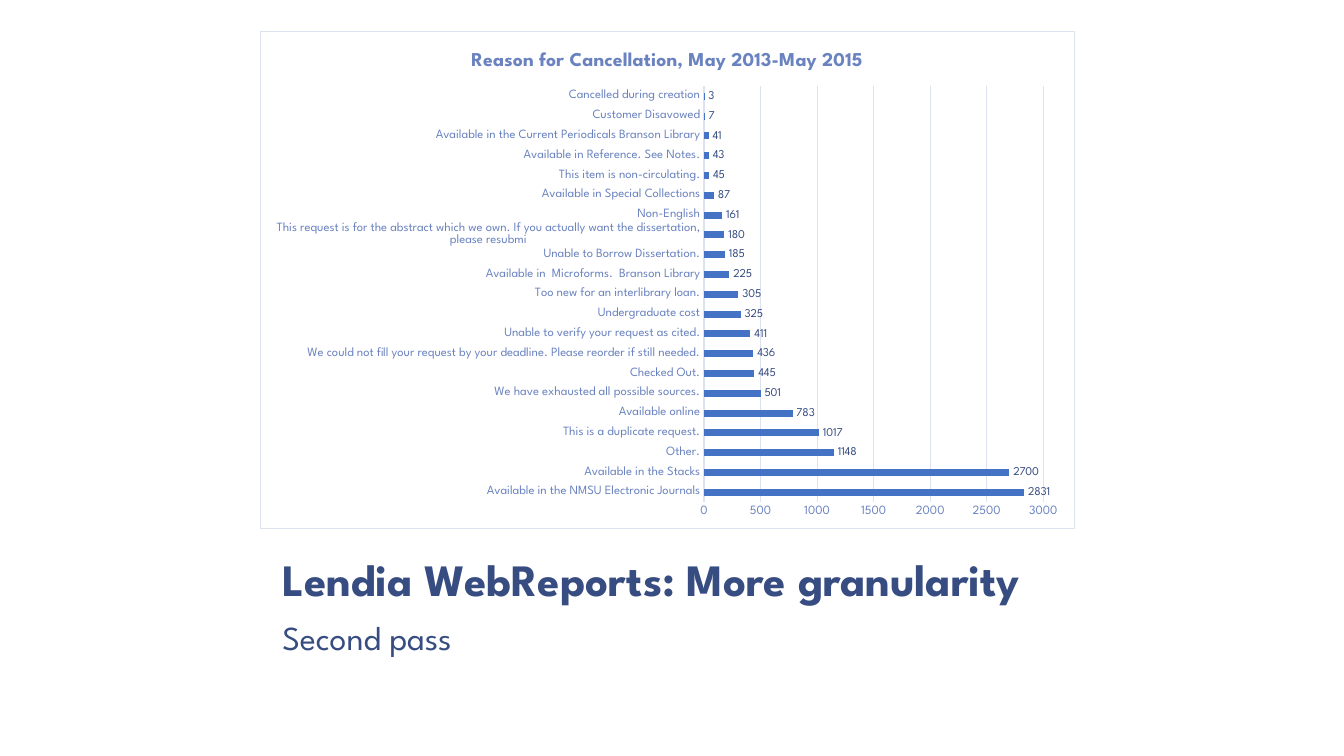
from dataclasses import dataclass

from lxml import etree
from pptx import Presentation
from pptx.chart.data import CategoryChartData
from pptx.dml.color import RGBColor
from pptx.enum.chart import XL_CHART_TYPE, XL_LABEL_POSITION, XL_TICK_MARK
from pptx.enum.text import MSO_ANCHOR
from pptx.oxml import parse_xml
from pptx.oxml.ns import nsdecls, qn
from pptx.util import Inches, Pt

BAR_CLUSTERED = XL_CHART_TYPE.BAR_CLUSTERED
OUTSIDE_END = XL_LABEL_POSITION.OUTSIDE_END
NO_TICK = XL_TICK_MARK.NONE
TOP, BOTTOM = MSO_ANCHOR.TOP, MSO_ANCHOR.BOTTOM


@dataclass(frozen=True)
class Theme:
    font: str = "League Spartan"
    dark: str = "374C81"
    soft: str = "6A83C0"
    rule: str = "DDE2F0"
    bar: str = "4472C4"
    paper: str = "FFFFFF"
    heading_size: float = 32
    subheading_size: float = 24
    chart_title_size: float = 14
    chart_size: float = 10
    axis_size: float = 9
    label_size: float = 8.5
    rule_width: float = 0.75


THEME = Theme()

CANCELLATIONS = {
    "Available in the NMSU Electronic Journals": 2831,
    "Available in the Stacks": 2700,
    "Other.": 1148,
    "This is a duplicate request.": 1017,
    "Available online": 783,
    "We have exhausted all possible sources.": 501,
    "Checked Out.": 445,
    "We could not fill your request by your deadline. Please reorder if still needed.": 436,
    "Unable to verify your request as cited.": 411,
    "Undergraduate cost": 325,
    "Too new for an interlibrary loan.": 305,
    "Available in  Microforms.  Branson Library": 225,
    "Unable to Borrow Dissertation.": 185,
    "This request is for the abstract which we own. If you actually want the "
    "dissertation, please resubmi": 180,
    "Non-English": 161,
    "Available in Special Collections": 87,
    "This item is non-circulating.": 45,
    "Available in Reference. See Notes.": 43,
    "Available in the Current Periodicals Branson Library": 41,
    "Customer Disavowed": 7,
    "Cancelled during creation": 3,
}


def set_font(font, size, color, bold=False):
    formats = {"name": THEME.font, "size": Pt(size), "bold": bold}
    for name, value in formats.items():
        setattr(font, name, value)
    font.color.rgb = RGBColor.from_string(color)


def set_rule(line):
    line.color.rgb = RGBColor.from_string(THEME.rule)
    line.width = Pt(THEME.rule_width)


def add_caption(slide, box, text, size, anchor, spacing, bold=False):
    shape = slide.shapes.add_textbox(*map(Inches, box))
    frame = shape.text_frame
    formats = {
        "word_wrap": True,
        "vertical_anchor": anchor,
        "margin_left": Inches(0.13),
        "margin_right": Inches(0.13),
        "margin_top": Inches(0.07),
        "margin_bottom": Inches(0.07),
    }
    for name, value in formats.items():
        setattr(frame, name, value)
    paragraph = frame.paragraphs[0]
    paragraph.line_spacing = spacing
    run = paragraph.add_run()
    run.text = text
    set_font(run.font, size, THEME.dark, bold)


def add_captions(slide, box):
    left, top, width, height = box
    heading_height = 0.83
    add_caption(slide, (left, top, width, heading_height),
                "Lendia WebReports: More granularity",
                THEME.heading_size, BOTTOM, 0.85, True)
    add_caption(slide, (left, top + heading_height, width, height - heading_height),
                "Second pass", THEME.subheading_size, TOP, 0.95)


def frame_chart(chart):
    border = parse_xml(
        f'<c:spPr {nsdecls("c", "a")}>'
        f'<a:solidFill><a:srgbClr val="{THEME.paper}"/></a:solidFill>'
        f'<a:ln w="{Pt(THEME.rule_width)}"><a:solidFill>'
        f'<a:srgbClr val="{THEME.rule}"/></a:solidFill></a:ln></c:spPr>')
    chart.element.find(qn("c:chart")).addnext(border)


def place_plot(chart, x, y, w, h):
    plot_area = chart.element.find(qn("c:chart")).find(qn("c:plotArea"))
    for layout in plot_area.findall(qn("c:layout")):
        plot_area.remove(layout)
    layout = etree.Element(qn("c:layout"))
    manual = etree.SubElement(layout, qn("c:manualLayout"))
    settings = {"layoutTarget": "inner", "xMode": "edge", "yMode": "edge",
                "x": x, "y": y, "w": w, "h": h}
    for name, value in settings.items():
        etree.SubElement(manual, qn(f"c:{name}")).set("val", str(value))
    plot_area.insert(0, layout)


def style_axes(chart):
    for axis in (chart.category_axis, chart.value_axis):
        axis.major_tick_mark = NO_TICK
        axis.minor_tick_mark = NO_TICK
        set_font(axis.tick_labels.font, THEME.axis_size, THEME.soft)
    set_rule(chart.category_axis.format.line)
    chart.category_axis.has_major_gridlines = False
    formats = {"minimum_scale": 0, "maximum_scale": 3000, "major_unit": 500,
               "has_major_gridlines": True}
    for name, value in formats.items():
        setattr(chart.value_axis, name, value)
    chart.value_axis.format.line.fill.background()
    set_rule(chart.value_axis.major_gridlines.format.line)


def style_bars(plot):
    plot.gap_width = 182
    plot.vary_by_categories = False
    fill = plot.series[0].format.fill
    fill.solid()
    fill.fore_color.rgb = RGBColor.from_string(THEME.bar)
    plot.has_data_labels = True
    formats = {"show_value": True, "position": OUTSIDE_END,
               "number_format": "0", "number_format_is_linked": False}
    for name, value in formats.items():
        setattr(plot.data_labels, name, value)
    set_font(plot.data_labels.font, THEME.label_size, THEME.dark)


def add_cancellation_chart(slide, box):
    data = CategoryChartData(number_format="0")
    data.categories = list(CANCELLATIONS)
    data.add_series("Series 1", list(CANCELLATIONS.values()))
    chart = slide.shapes.add_chart(BAR_CLUSTERED, *map(Inches, box), data).chart
    set_font(chart.font, THEME.chart_size, THEME.dark)
    chart.has_legend = False
    chart.has_title = True
    chart.chart_title.include_in_layout = False
    paragraph = chart.chart_title.text_frame.paragraphs[0]
    run = paragraph.add_run()
    run.text = "Reason for Cancellation, May 2013-May 2015"
    set_font(run.font, THEME.chart_title_size, THEME.soft, True)
    style_axes(chart)
    style_bars(chart.plots[0])
    frame_chart(chart)
    place_plot(chart, 0.545, 0.11, 0.417, 0.837)


def main():
    presentation = Presentation()
    presentation.slide_width = Inches(13.33)
    presentation.slide_height = Inches(7.5)
    slide = presentation.slides.add_slide(presentation.slide_layouts[6])
    fill = slide.background.fill
    fill.solid()
    fill.fore_color.rgb = RGBColor.from_string(THEME.paper)
    add_captions(slide, (2.67, 5.25, 8, 1.72))
    add_cancellation_chart(slide, (2.58, 0.31, 8.08, 4.94))
    presentation.save("out.pptx")


if __name__ == "__main__":
    main()
